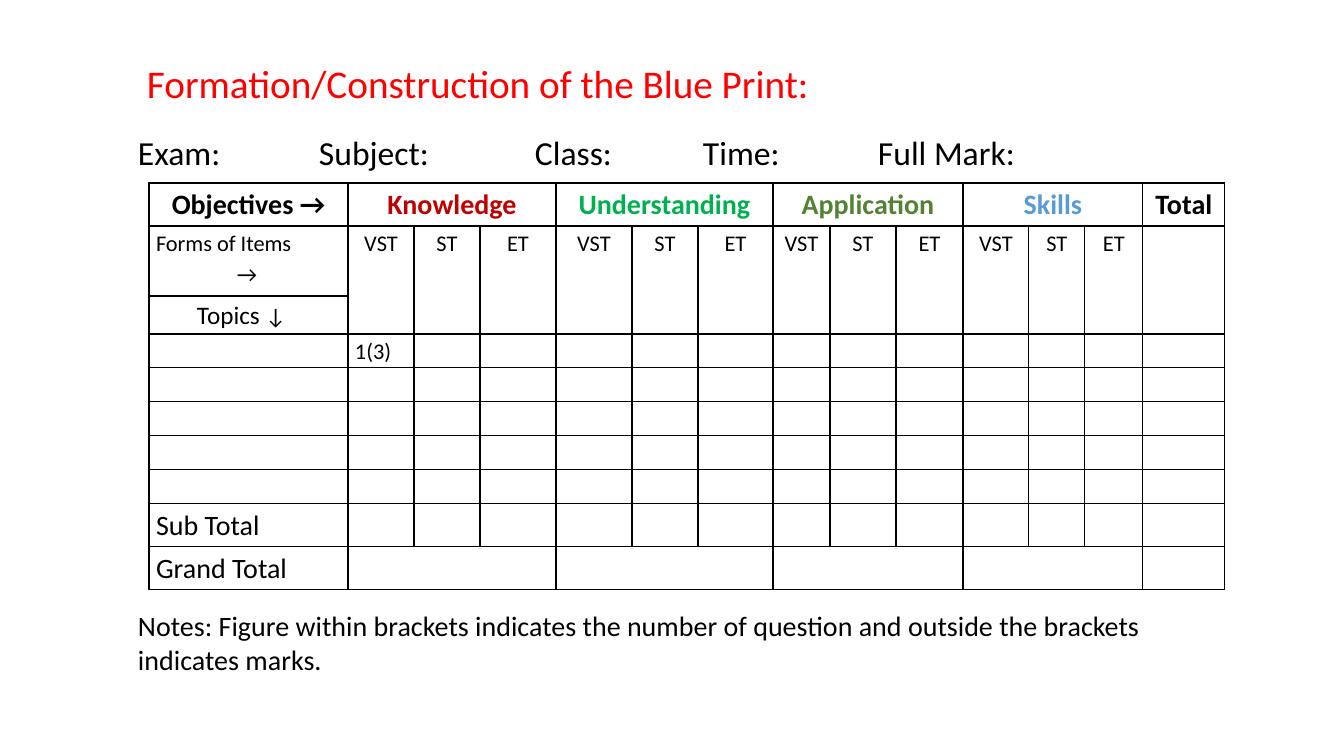
"""Build the blue print slide: a title, exam details, a marks table and notes."""
from dataclasses import dataclass

from lxml.etree import SubElement as Sub
from pptx import Presentation as Deck
from pptx.dml.color import RGBColor as Rgb
from pptx.enum.text import MSO_ANCHOR as Anchor, MSO_AUTO_SIZE as Fit, PP_ALIGN as Align
from pptx.oxml.ns import qn
from pptx.util import Emu, Pt

SCALE = 914400 / 100.8


def px(count):
    """Turn whole pixels into EMU."""
    return Emu(round(count * SCALE))


@dataclass(frozen=True)
class Theme:
    """Hold the font, colours and type sizes."""
    font: str = "Calibri"
    ink: str = "000000"
    red: str = "FF0000"
    know: str = "C00000"
    grasp: str = "00B050"
    apply: str = "548235"
    skill: str = "5B9BD5"
    head: int = 28
    exam: int = 24
    body: int = 20
    topic: int = 18
    small: int = 16
    rule: int = 1


def write(par, text, font="Calibri", size=16, color="000000", bold=False,
          align=Align.LEFT, space=1.0, indent=0, tabs=()):
    """Add text to a paragraph and format both."""
    par.alignment = align
    par.line_spacing = space
    props = par._p.get_or_add_pPr()
    if indent:
        props.set("marL", str(px(indent)))
        props.set("indent", "0")
    if tabs:
        stops = Sub(props, qn("a:tabLst"))
        for stop in tabs:
            Sub(stops, qn("a:tab"), pos=str(px(stop)), algn="l")
    if not text:
        Sub(par._p, qn("a:endParaRPr"), sz=str(size * 100))
        return
    run = par.add_run()
    run.text = text
    run.font.name = font
    run.font.size = Pt(size)
    run.font.bold = bold
    run.font.color.rgb = Rgb.from_string(color)


class Page:
    """Draw styled elements on one slide."""

    def __init__(self, deck, theme):
        """Add a title-only slide."""
        self.theme = theme
        self.slide = deck.slides.add_slide(deck.slide_layouts[5])

    def place(self, shape, box, text, **style):
        """Move a text shape and fill it."""
        shape.left, shape.top, shape.width, shape.height = map(px, box)
        frame = shape.text_frame
        frame.word_wrap = True
        frame.auto_size = Fit.NONE
        frame.vertical_anchor = Anchor.TOP
        frame.margin_left = frame.margin_right = 0
        frame.margin_top = frame.margin_bottom = 0
        write(frame.paragraphs[0], text, font=self.theme.font, **style)

    def title(self, box, text, **style):
        """Fill the title placeholder."""
        self.place(self.slide.shapes.title, box, text, **style)

    def text(self, box, text, **style):
        """Add a text box."""
        self.place(self.slide.shapes.add_textbox(*map(px, box)), box, text, **style)

    def table(self, left, top, cols, rows):
        """Add a plain ruled table."""
        grid = self.slide.shapes.add_table(
            len(rows), len(cols), px(left), px(top), px(sum(cols)), px(sum(rows))).table
        grid.first_row = grid.horz_banding = False
        for col, width in zip(grid.columns, cols):
            col.width = px(width)
        for row, height in zip(grid.rows, rows):
            row.height = px(height)
        for cell in grid.iter_cells():
            self.rule(cell)
        return grid

    def rule(self, cell):
        """Set the borders, margins and fill of a cell."""
        cell.margin_left = cell.margin_right = px(7)
        cell.margin_top = cell.margin_bottom = 0
        props = cell._tc.get_or_add_tcPr()
        for side in "LRTB":
            line = Sub(props, qn(f"a:ln{side}"), w=str(Pt(self.theme.rule)))
            fill = Sub(line, qn("a:solidFill"))
            Sub(fill, qn("a:srgbClr"), val=self.theme.ink)
        cell.fill.background()

    def cell(self, cell, text, **style):
        """Write in the first paragraph of a cell."""
        write(cell.text_frame.paragraphs[0], text, font=self.theme.font, space=1.15, **style)


def fill(page, grid):
    """Merge and fill the cells of the marks table."""
    theme = page.theme
    goals = [("Knowledge", theme.know), ("Understanding", theme.grasp),
             ("Application", theme.apply), ("Skills", theme.skill)]
    forms = ["VST", "ST", "ET"]
    total = len(goals) * len(forms) + 1
    last = len(grid.rows) - 1
    mid = dict(align=Align.CENTER)
    head = dict(size=theme.body, bold=True, **mid)
    cells = {
        (0, 0): ("Objectives →", head),
        (0, total): ("Total", head),
        (1, 0): ("Forms of Items", dict(size=theme.small)),
        (2, 0): ("Topics ", dict(size=theme.topic, indent=41)),
        (3, 1): ("1(3)", dict(size=theme.small)),
        (last - 1, 0): ("Sub Total", dict(size=theme.body)),
        (last, 0): ("Grand Total", dict(size=theme.body)),
    }
    for i, (goal, color) in enumerate(goals):
        start = 1 + i * len(forms)
        end = start + len(forms) - 1
        cells[0, start] = goal, dict(color=color, **head)
        for row in (0, last):
            grid.cell(row, start).merge(grid.cell(row, end))
        for j, form in enumerate(forms, start):
            cells[1, j] = form, dict(size=theme.small, **mid)
    for col in range(1, total + 1):
        grid.cell(1, col).merge(grid.cell(2, col))
    for row in range(last + 1):
        for col in range(total + 1):
            text, style = cells.get((row, col), ("", dict(size=theme.small)))
            page.cell(grid.cell(row, col), text, **style)
    arrow = grid.cell(1, 0).text_frame.add_paragraph()
    write(arrow, "→", font=theme.font, size=theme.small, space=1.15, indent=81)
    page.cell(grid.cell(2, 0), "↓", size=theme.small)


def main():
    """Build and save the deck."""
    deck = Deck()
    deck.slide_width, deck.slide_height = px(1344), px(756)
    theme = Theme()
    page = Page(deck, theme)
    page.title((147, 59, 1093, 50), "Formation/Construction of the Blue Print:",
               size=theme.head, color=theme.red)
    labels = ["Exam:", "Subject:", "Class:", "Time:", "Full Mark:"]
    page.text((138, 132, 1102, 42), "\t".join(labels), size=theme.exam,
              tabs=(181, 397, 565, 740))
    cols = [199, 66, 66, 76, 76, 66, 75, 57, 66, 67, 66, 56, 58, 82]
    rows = [43, 70, 38] + [34] * 5 + [43] * 2
    fill(page, page.table(149, 183, cols, rows))
    page.text((138, 609, 1102, 70),
              "Notes: Figure within brackets indicates the number of question "
              "and outside the brackets indicates marks.", size=theme.body)
    deck.save("out.pptx")


if __name__ == "__main__":
    main()
